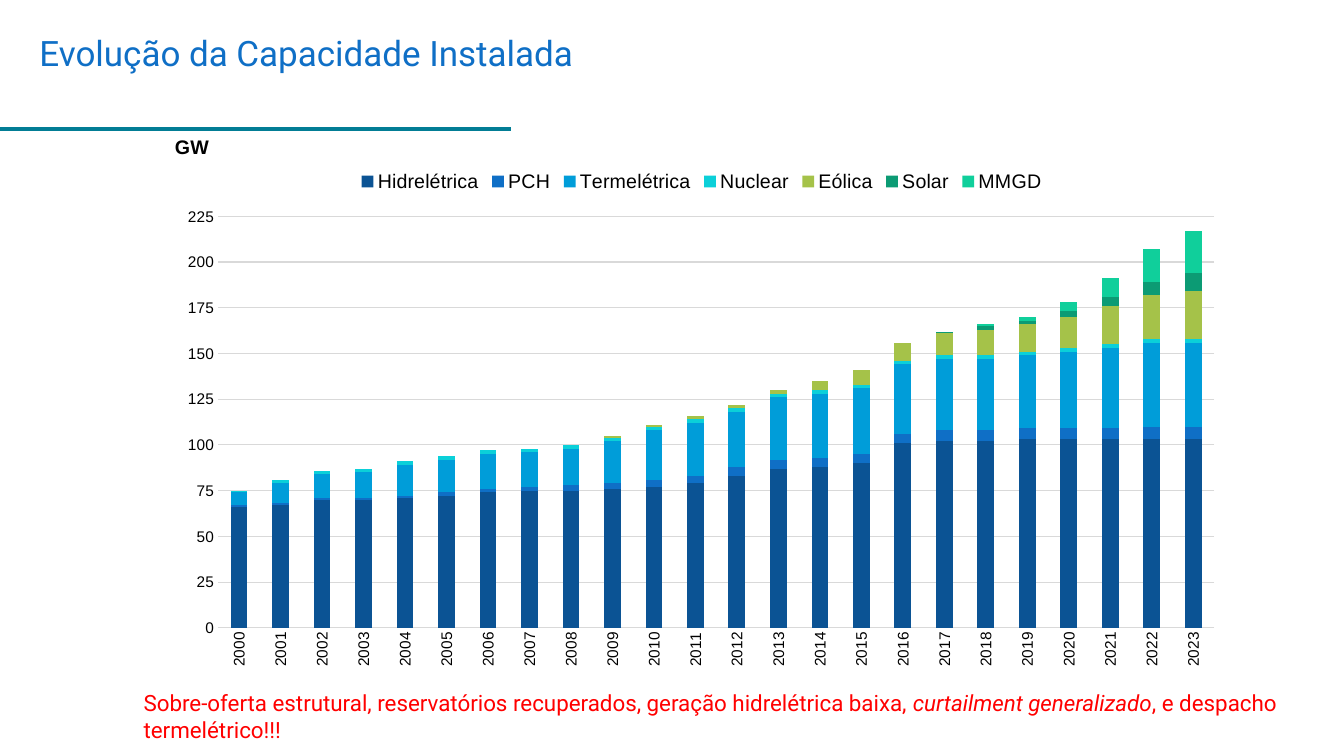
from lxml.etree import SubElement
from pptx import Presentation
from pptx.chart.data import CategoryChartData
from pptx.dml.color import RGBColor
from pptx.enum.chart import XL_CHART_TYPE, XL_LEGEND_POSITION, XL_TICK_MARK
from pptx.enum.shapes import MSO_CONNECTOR
from pptx.enum.text import MSO_ANCHOR, MSO_AUTO_SIZE, PP_ALIGN
from pptx.oxml import parse_xml
from pptx.oxml.ns import nsdecls, qn
from pptx.util import Pt

BLACK = RGBColor(0x00, 0x00, 0x00)
RED = RGBColor(0xFF, 0x00, 0x00)
BLUE = RGBColor(0x0F, 0x6F, 0xC6)
TEAL = RGBColor(0x02, 0x7D, 0x95)
GRID_GRAY = RGBColor(0xD9, 0xD9, 0xD9)

YEARS = [str(year) for year in range(2000, 2024)]
CAPACITY = [
    ("Hidrelétrica", RGBColor(0x0B, 0x53, 0x94),
     [66, 67, 70, 70, 71, 72, 74, 75, 75, 76, 77, 79,
      83, 87, 88, 90, 101, 102, 102, 103, 103, 103, 103, 103]),
    ("PCH", BLUE,
     [1, 1, 1, 1, 1, 2, 2, 2, 3, 3, 4, 4, 5, 5, 5, 5, 5, 6, 6, 6, 6, 6, 7, 7]),
    ("Termelétrica", RGBColor(0x00, 0x9D, 0xD9),
     [7, 11, 13, 14, 17, 18, 19, 19, 20, 23, 27, 29,
      30, 34, 35, 36, 38, 39, 39, 40, 42, 44, 46, 46]),
    ("Nuclear", RGBColor(0x0B, 0xD0, 0xD9), [1] + [2] * 23),
    ("Eólica", RGBColor(0xA5, 0xC2, 0x49),
     [0] * 9 + [1, 1, 2, 2, 2, 5, 8, 10, 12, 14, 15, 17, 21, 24, 26]),
    ("Solar", RGBColor(0x0C, 0x9B, 0x74), [0] * 17 + [1, 2, 2, 3, 5, 7, 10]),
    ("MMGD", RGBColor(0x10, 0xCF, 0x9B),
     [None] * 15 + [0, 0, 0, 1, 2, 5, 10, 18, 23]),
]


def format_font(font, size, color=BLACK, name="Arial", bold=False, italic=False):
    """Set every property of a font."""
    font.name, font.size, font.bold, font.italic = name, Pt(size), bold, italic
    font.color.rgb = color


def add_text(paragraph, text, **font_format):
    """Append a formatted run to a paragraph."""
    run = paragraph.add_run()
    run.text = text
    format_font(run.font, **font_format)


def set_layout(element, index, **fractions):
    """Place a chart part at fractions of the chart area."""
    for layout in element.findall(qn("c:layout")):
        element.remove(layout)
    layout = parse_xml(f"<c:layout {nsdecls('c')}><c:manualLayout/></c:layout>")
    settings = {"xMode": "edge", "yMode": "edge", **fractions}
    if element.tag == qn("c:plotArea"):
        settings = {"layoutTarget": "inner", **settings}
    for name, value in settings.items():
        SubElement(layout[0], qn(f"c:{name}")).set("val", str(value))
    element.insert(index, layout)


def add_header(slide, left, top, width, height):
    """Fill the title and draw the rule below it."""
    title = slide.shapes.title
    title.left, title.top = Pt(left), Pt(top)
    title.width, title.height = Pt(width), Pt(height)
    frame = title.text_frame
    frame.auto_size = MSO_AUTO_SIZE.NONE
    frame.vertical_anchor = MSO_ANCHOR.TOP
    paragraph = frame.paragraphs[0]
    paragraph.alignment = PP_ALIGN.LEFT
    paragraph.line_spacing = 0.95
    add_text(paragraph, "Evolução da Capacidade Instalada",
             size=25, color=BLUE, name="Roboto")
    rule_top = Pt(top + height + 30)
    rule = slide.shapes.add_connector(
        MSO_CONNECTOR.STRAIGHT, 0, rule_top, Pt(365), rule_top)
    rule.line.color.rgb = TEAL
    rule.line.width = Pt(2.5)
    SubElement(rule._element.spPr, qn("a:effectLst"))


def format_axes(chart):
    """Format the year axis and the capacity axis."""
    for axis in (chart.category_axis, chart.value_axis):
        axis.major_tick_mark = axis.minor_tick_mark = XL_TICK_MARK.NONE
        format_font(axis.tick_labels.font, 11)
    years, capacity = chart.category_axis, chart.value_axis
    body = years._element.find(qn("c:txPr")).find(qn("a:bodyPr"))
    body.set("rot", "-5400000")
    body.set("vert", "horz")
    capacity.minimum_scale, capacity.maximum_scale = 0, 225
    capacity.major_unit = 25
    capacity.format.line.fill.background()
    for line in (years.format.line, capacity.major_gridlines.format.line):
        line.color.rgb = GRID_GRAY
        line.width = Pt(0.75)


def add_capacity_chart(slide, left, top, width, height):
    """Add the stacked columns of capacity by source."""
    data = CategoryChartData()
    data.categories = YEARS
    for name, _, values in CAPACITY:
        data.add_series(name, values)
    chart = slide.shapes.add_chart(
        XL_CHART_TYPE.COLUMN_STACKED,
        Pt(left), Pt(top), Pt(width), Pt(height), data).chart
    format_font(chart.font, 9)
    plot = chart.plots[0]
    plot.gap_width, plot.overlap = 150, 100
    plot.vary_by_categories = False
    for series, (_, color, _) in zip(plot.series, CAPACITY):
        series.format.fill.solid()
        series.format.fill.fore_color.rgb = color
    format_axes(chart)
    add_text(chart.chart_title.text_frame.paragraphs[0], "GW", size=14, bold=True)
    chart.has_legend = True
    legend = chart.legend
    legend.position = XL_LEGEND_POSITION.TOP
    legend.include_in_layout = False
    format_font(legend.font, 14)
    set_layout(chart.chart_title._element, 1, x=0.003, y=0.075)
    set_layout(legend._element, 1, x=0.175, y=0.135, w=0.65, h=0.05)
    set_layout(chart._chartSpace.chart.plotArea, 0, x=0.047, y=0.219, w=0.933, h=0.696)


def add_conclusion(slide, left, top, width, height):
    """Add the closing remark below the chart."""
    frame = slide.shapes.add_textbox(
        Pt(left), Pt(top), Pt(width), Pt(height)).text_frame
    frame.word_wrap = True
    paragraph = frame.paragraphs[0]
    for text, italic in (
        ("Sobre-oferta estrutural, reservatórios recuperados, "
         "geração hidrelétrica baixa, ", False),
        ("curtailment generalizado", True),
        (", e despacho termelétrico!!!", False),
    ):
        add_text(paragraph, text, size=16, color=RED, name="Roboto", italic=italic)


def main():
    """Build and save the presentation."""
    presentation = Presentation()
    presentation.slide_width, presentation.slide_height = Pt(960), Pt(540)
    slide = presentation.slides.add_slide(presentation.slide_layouts[5])
    add_header(slide, 21, 21, 893, 41)
    add_capacity_chart(slide, 120, 62, 762.5, 422.5)
    add_conclusion(slide, 95.5, 489, 864, 46)
    presentation.save("out.pptx")


if __name__ == "__main__":
    main()
